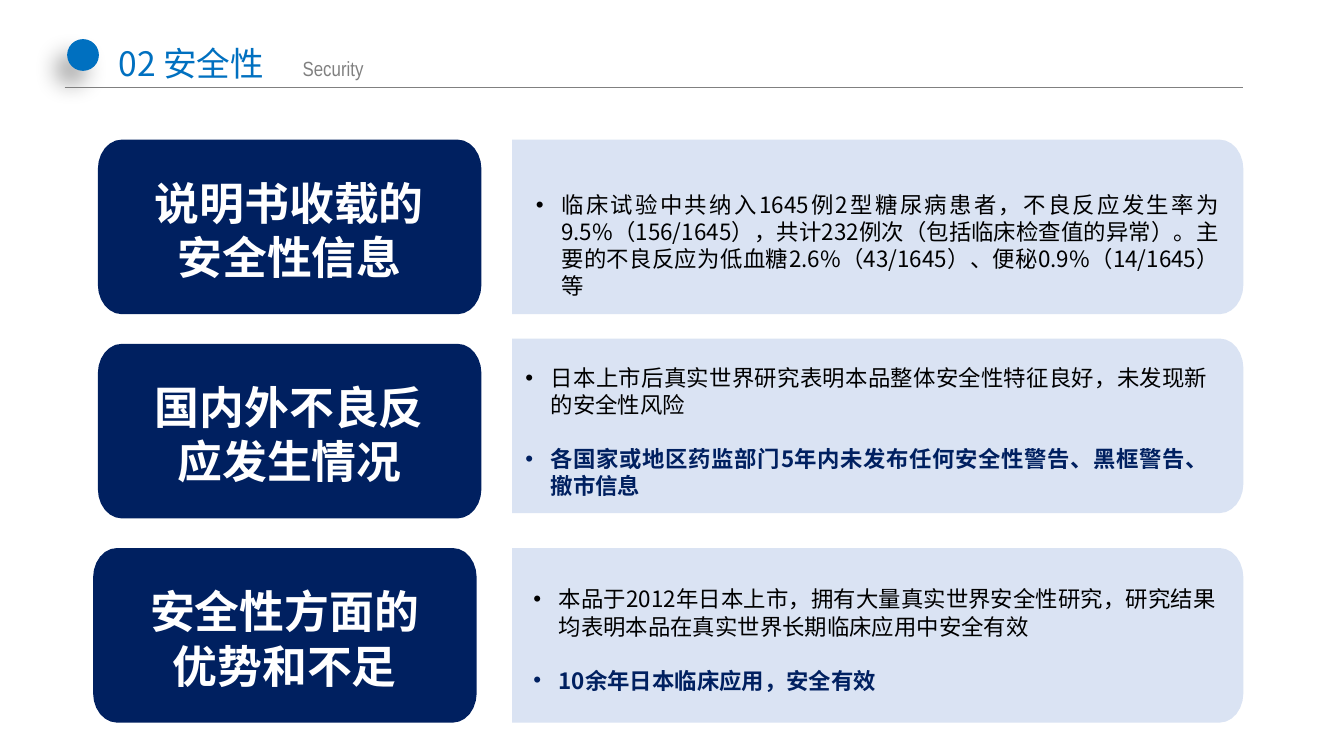
import math

import pptx
import pptx.dml.color
import pptx.enum.shapes
import pptx.enum.text
import pptx.oxml
import pptx.oxml.ns
import pptx.util
from pptx.util import Cm

RGBColor = pptx.dml.color.RGBColor
BLUE = RGBColor(0x00, 0x70, 0xC0)
NAVY = RGBColor(0x00, 0x20, 0x60)
PALE = RGBColor(0xDA, 0xE3, 0xF3)
GRAY = RGBColor(0x80, 0x80, 0x80)
WHITE = RGBColor(0xFF, 0xFF, 0xFF)
BLACK = RGBColor(0x00, 0x00, 0x00)
CJK = "Noto Sans CJK SC"
LATIN = "Arial Narrow"
ALIGN = pptx.enum.text.PP_ALIGN
LINE_RATIO = 1.21
CORNER_X, CORNER_Y = 0.45, 0.56


def add_xml(parent, tag, **attributes):
    child = pptx.oxml.parse_xml(f"<a:{tag} {pptx.oxml.ns.nsdecls('a')}/>")
    for name, value in attributes.items():
        child.set(name, str(value))
    parent.append(child)
    return child


class SlideBuilder:
    """Holds the text style and the slide being filled."""

    def __init__(self, page):
        self.page = page

    def fill(self, shape, color):
        shape.shadow.inherit = False
        shape.fill.solid()
        shape.fill.fore_color.rgb = color
        shape.line.fill.background()

    def dot(self):
        group = self.page.shapes.add_group_shape()
        oval = pptx.enum.shapes.MSO_SHAPE.OVAL
        for left, top, size in ((1.27, 0.74, 0.6), (1.28, 0.75, 0.58)):
            circle = group.shapes.add_shape(oval, Cm(left), Cm(top), Cm(size), Cm(size))
            self.fill(circle, BLUE)
        effects = group.shapes[0].element.spPr.find(pptx.oxml.ns.qn("a:effectLst"))
        shadow = add_xml(effects, "outerShdw", blurRad=pptx.util.Pt(12),
                         dist=pptx.util.Pt(10), dir=130 * 60000)
        add_xml(add_xml(shadow, "srgbClr", val=BLACK), "alpha", val=32000)

    def rule(self, left, top, right):
        line = self.page.shapes.add_connector(
            pptx.enum.shapes.MSO_CONNECTOR.STRAIGHT, Cm(left), Cm(top), Cm(right), Cm(top))
        line.line.color.rgb = GRAY
        line.line.width = pptx.util.Pt(0.5)
        add_xml(line.element.spPr, "effectLst")

    def block(self, left, top, width, height, color, round_left):
        """Draw a block with rounded right corners, and left ones if asked."""
        right, bottom = left + width, top + height
        corners = [(right, top, -90, True), (right, bottom, 0, True),
                   (left, bottom, 90, round_left), (left, top, 180, round_left)]
        points = []
        for x, y, start, rounded in corners:
            if not rounded:
                points.append((x, y))
                continue
            center_x = x - CORNER_X if x == right else x + CORNER_X
            center_y = y - CORNER_Y if y == bottom else y + CORNER_Y
            for step in range(7):
                angle = math.radians(start + 15 * step)
                points.append((center_x + CORNER_X * math.cos(angle),
                               center_y + CORNER_Y * math.sin(angle)))
        points = [(Cm(x), Cm(y)) for x, y in points]
        builder = self.page.shapes.build_freeform(*points[0], scale=1.0)
        builder.add_line_segments(points[1:], close=True)
        self.fill(builder.convert_to_shape(), color)

    def text(self, left, top, width, height, lines, size, align):
        box = self.page.shapes.add_textbox(Cm(left), Cm(top), Cm(width), Cm(height))
        frame = box.text_frame
        frame.word_wrap = True
        frame.text = "\n".join(lines)
        for para in frame.paragraphs:
            para.alignment = align
            para.line_spacing = pptx.util.Pt(round(size * LINE_RATIO, 1))
        return frame

    def style(self, span, size, color, bold=False, font=CJK):
        span.font.size = pptx.util.Pt(size)
        span.font.name = font
        span.font.bold = bold
        span.font.color.rgb = color
        add_xml(span.font._element, "ea", typeface=font)

    def heading(self, title, subtitle):
        frame = self.text(2.06, 0.71, 5.4, 1.42, [title], 18, ALIGN.LEFT)
        frame.margin_left = frame.margin_right = Cm(0.18)
        frame.margin_top = frame.margin_bottom = Cm(0.1)
        para = frame.paragraphs[0]
        tabs = add_xml(para._p.get_or_add_pPr(), "tabLst")
        add_xml(tabs, "tab", pos=Cm(3.48), algn="l")
        self.style(para.runs[0], 18, BLUE)
        span = para.add_run()
        span.text = "\t" + subtitle
        self.style(span, 11, GRAY, font=LATIN)

    def card(self, left, top, title):
        self.block(left, top, 7.25, 3.3, NAVY, True)
        frame = self.text(left + 0.52, top + 0.55, 6.2, 2.31, [title], 24, ALIGN.CENTER)
        self.style(frame.paragraphs[0].runs[0], 24, WHITE, True)

    def bullets(self, left, top, height, lines):
        """Write a plain first point and a bold navy second one."""
        frame = self.text(left, top, 13.41, height, lines, 12, ALIGN.JUSTIFY)
        for index, para in enumerate(frame.paragraphs):
            if index:
                para.space_before = pptx.util.Pt(14.5)
            properties = para._p.get_or_add_pPr()
            properties.set("marL", str(Cm(0.48)))
            properties.set("indent", str(-Cm(0.48)))
            add_xml(properties, "buFont", typeface="Arial")
            add_xml(properties, "buChar", char="•")
            self.style(para.runs[0], 12, NAVY if index else BLACK, bool(index))


# card left, card top, title, panel top, text left, text top, text height, points
SECTIONS = [
    (1.85, 2.64, "说明书收载的安全性信息", 2.64, 9.88, 3.48, 2.31,
     ["临床试验中共纳入1645例2型糖尿病患者，不良反应发生率为9.5%（156/1645），"
      "共计232例次（包括临床检查值的异常）。主要的不良反应为低血糖2.6%（43/1645）、"
      "便秘0.9%（14/1645）等"]),
    (1.85, 6.5, "国内外不良反应发生情况", 6.4, 9.68, 6.75, 3.76,
     ["日本上市后真实世界研究表明本品整体安全性特征良好，未发现新的安全性风险",
      "各国家或地区药监部门5年内未发布任何安全性警告、黑框警告、撤市信息"]),
    (1.76, 10.36, "安全性方面的优势和不足", 10.36, 9.83, 10.94, 2.31,
     ["本品于2012年日本上市，拥有大量真实世界安全性研究，"
      "研究结果均表明本品在真实世界长期临床应用中安全有效",
      "10余年日本临床应用，安全有效"]),
]


def main():
    deck = pptx.Presentation()
    deck.slide_width, deck.slide_height = Cm(25.4), Cm(14.29)
    slide = SlideBuilder(deck.slides.add_slide(deck.slide_layouts[6]))
    slide.dot()
    slide.heading("02 安全性", "Security")
    slide.rule(1.22, 1.65, 23.5)
    for left, top, title, panel_top, text_left, text_top, height, points in SECTIONS:
        slide.card(left, top, title)
        slide.block(9.68, panel_top, 13.82, 3.3, PALE, False)
        slide.bullets(text_left, text_top, height, points)
    deck.save("out.pptx")


if __name__ == "__main__":
    main()
